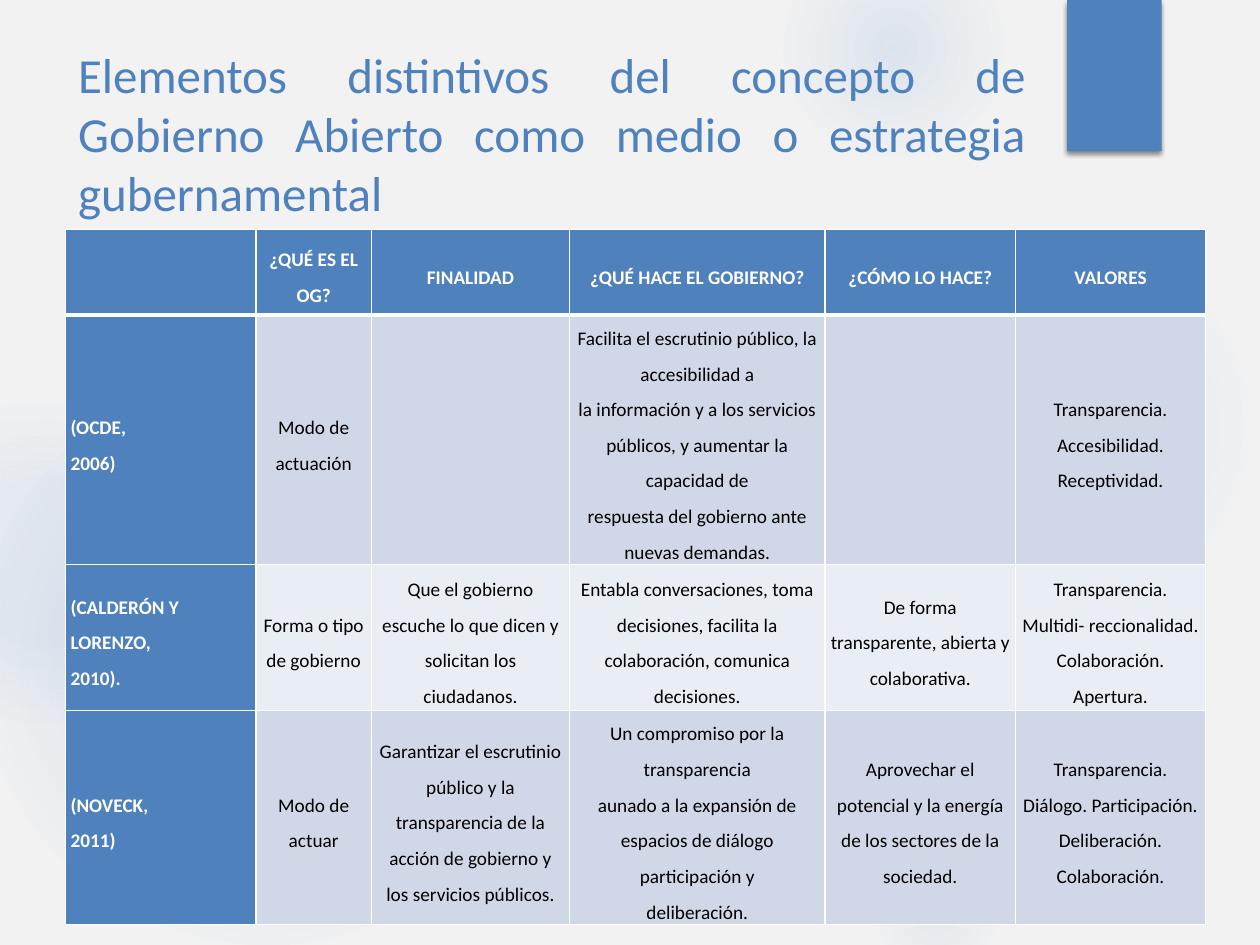
from dataclasses import dataclass

import lxml.etree
import pptx
import pptx.dml.color
import pptx.enum.shapes
import pptx.enum.text
import pptx.oxml
import pptx.oxml.ns
import pptx.util
from pptx.util import Inches

RGBColor = pptx.dml.color.RGBColor
Align = pptx.enum.text.PP_ALIGN
Anchor = pptx.enum.text.MSO_ANCHOR
Preset = pptx.enum.shapes.MSO_SHAPE

BACKGROUND = RGBColor(0xF2, 0xF2, 0xF2)
BLUE = RGBColor(0x4F, 0x81, 0xBD)
GLOW = RGBColor(0x55, 0x8E, 0xD5)
BAND_DARK = RGBColor(0xD0, 0xD8, 0xE8)
BAND_LIGHT = RGBColor(0xE9, 0xED, 0xF4)
WHITE = RGBColor(0xFF, 0xFF, 0xFF)
BLACK = RGBColor(0, 0, 0)
FONT = "Calibri"
NAMESPACE = pptx.oxml.ns.nsdecls("a")


@dataclass
class Halo:
    left: float
    top: float
    size: float
    alphas: tuple[int, int, int]
    middle: int
    edge: int


HALOS = [
    Halo(6.89, 1.83, 3.08, (7, 6, 0), 36, 69),
    Halo(6.22, -0.5, 1.75, (14, 7, 0), 36, 73),
    Halo(6.89, 6.67, 1.08, (9, 5, 0), 36, 66),
    Halo(-0.17, 2.92, 4.58, (11, 10, 0), 36, 75),
    Halo(-0.92, 3.17, 2.58, (8, 8, 0), 36, 72),
]

COLUMN_WIDTHS = [1.51, 0.92, 1.57, 2.03, 1.51, 1.51]
ROW_HEIGHTS = [0.68, 1.96, 1.16, 1.68]
ROWS = [
    ["", "¿QUÉ ES EL\nOG?", "FINALIDAD", "¿QUÉ HACE EL GOBIERNO?", "¿CÓMO LO HACE?", "VALORES"],
    [
        "(OCDE,\n2006)",
        "Modo de actuación",
        "",
        "Facilita el escrutinio público, la accesibilidad a\n"
        "la información y a los servicios públicos, y aumentar la capacidad de\n"
        "respuesta del gobierno ante nuevas demandas.",
        "",
        "Transparencia. Accesibilidad. Receptividad.",
    ],
    [
        "(CALDERÓN Y\nLORENZO,\n2010).",
        "Forma o tipo de gobierno",
        "Que el gobierno escuche lo que dicen y solicitan los ciudadanos.",
        "Entabla conversaciones, toma decisiones, facilita la colaboración, comunica decisiones.",
        "De forma transparente, abierta y colaborativa.",
        "Transparencia.\nMultidi- reccionalidad. Colaboración.\nApertura.",
    ],
    [
        "(NOVECK,\n2011)",
        "Modo de actuar",
        "Garantizar el escrutinio público y la transparencia de la acción de gobierno "
        "y los servicios públicos.",
        "Un compromiso por la\ntransparencia\naunado a la expansión de\n"
        "espacios de diálogo participación y\ndeliberación.",
        "Aprovechar el potencial y la energía de los sectores de la sociedad.",
        "Transparencia.\nDiálogo. Participación.\nDeliberación. Colaboración.",
    ],
]


def draw_halo(slide, halo: Halo) -> None:
    shape = slide.shapes.add_shape(
        Preset.OVAL, Inches(halo.left), Inches(halo.top), Inches(halo.size), Inches(halo.size)
    )
    shape.shadow.inherit = False
    shape.line.fill.background()
    stops = "".join(
        f'<a:gs pos="{position * 1000}"><a:srgbClr val="{GLOW}">'
        f'<a:alpha val="{alpha * 1000}"/></a:srgbClr></a:gs>'
        for position, alpha in zip((0, halo.middle, halo.edge), halo.alphas)
    )
    gradient = pptx.oxml.parse_xml(
        f"<a:gradFill {NAMESPACE}><a:gsLst>{stops}</a:gsLst>"
        '<a:path path="circle"><a:fillToRect l="50000" t="50000" r="50000" b="50000"/></a:path>'
        "</a:gradFill>"
    )
    shape.element.spPr.find(pptx.oxml.ns.qn("a:prstGeom")).addnext(gradient)


def draw_tab(slide) -> None:
    tab = slide.shapes.add_shape(Preset.RECTANGLE, Inches(8.47), 0, Inches(0.75), Inches(1.2))
    tab.fill.solid()
    tab.fill.fore_color.rgb = BLUE
    tab.line.fill.background()
    tab.element.spPr.append(pptx.oxml.parse_xml(
        f"<a:effectLst {NAMESPACE}>"
        f'<a:outerShdw blurRad="{pptx.util.Pt(3)}" dist="{pptx.util.Pt(2)}" dir="5400000">'
        f'<a:srgbClr val="{BLACK}"><a:alpha val="45000"/></a:srgbClr></a:outerShdw></a:effectLst>'
    ))


def write_title(slide) -> None:
    title = slide.shapes.title
    title.left, title.top = Inches(0.52), Inches(0.29)
    title.width, title.height = Inches(7.72), Inches(1.53)
    frame = title.text_frame
    frame.word_wrap = True
    frame.auto_size = pptx.enum.text.MSO_AUTO_SIZE.NONE
    frame.vertical_anchor = Anchor.MIDDLE
    paragraph = frame.paragraphs[0]
    paragraph.text = (
        "Elementos distintivos del concepto de Gobierno Abierto "
        "como medio o estrategia gubernamental"
    )
    paragraph.alignment = Align.JUSTIFY
    paragraph.font.name = FONT
    paragraph.font.size = pptx.util.Pt(28)
    paragraph.font.color.rgb = BLUE
    slide.shapes.element.append(title.element)


def set_borders(cell, top: int, bottom: int) -> None:
    properties = cell._tc.get_or_add_tcPr()
    for side, width in (("L", 1), ("R", 1), ("T", top), ("B", bottom)):
        properties.append(pptx.oxml.parse_xml(
            f'<a:ln{side} {NAMESPACE} w="{pptx.util.Pt(width)}"><a:solidFill>'
            f'<a:srgbClr val="{WHITE}"/></a:solidFill></a:ln{side}>'
        ))


def fill_cell(cell, text: str, row: int, column: int) -> None:
    heading = row == 0 or column == 0
    set_borders(cell, 3 if row == 1 else 1, 3 if row == 0 else 1)
    cell.fill.solid()
    cell.fill.fore_color.rgb = BLUE if heading else BAND_DARK if row % 2 else BAND_LIGHT
    cell.margin_left = cell.margin_right = Inches(0.04)
    cell.margin_top = cell.margin_bottom = 0
    cell.vertical_anchor = Anchor.MIDDLE
    paragraph = cell.text_frame.paragraphs[0]
    paragraph.text = text
    paragraph.alignment = Align.LEFT if column == 0 else Align.CENTER
    paragraph.line_spacing = 1.5
    paragraph.font.name = FONT
    paragraph.font.size = pptx.util.Pt(11)
    paragraph.font.bold = heading
    paragraph.font.color.rgb = WHITE if heading else BLACK


def draw_table(slide) -> None:
    table = slide.shapes.add_table(
        len(ROWS), len(COLUMN_WIDTHS), Inches(0.52), Inches(1.82),
        Inches(sum(COLUMN_WIDTHS)), Inches(sum(ROW_HEIGHTS)),
    ).table
    for column, width in zip(table.columns, COLUMN_WIDTHS):
        column.width = Inches(width)
    for row, height in zip(table.rows, ROW_HEIGHTS):
        row.height = Inches(height)
    for row_index, texts in enumerate(ROWS):
        for column_index, text in enumerate(texts):
            fill_cell(table.cell(row_index, column_index), text, row_index, column_index)


def main() -> None:
    deck = pptx.Presentation()
    deck.slide_width, deck.slide_height = Inches(10), Inches(7.5)
    slide = deck.slides.add_slide(deck.slide_layouts[5])
    slide.background.fill.solid()
    slide.background.fill.fore_color.rgb = BACKGROUND
    for halo in HALOS:
        draw_halo(slide, halo)
    draw_tab(slide)
    write_title(slide)
    draw_table(slide)
    deck.save("out.pptx")


if __name__ == "__main__":
    main()
